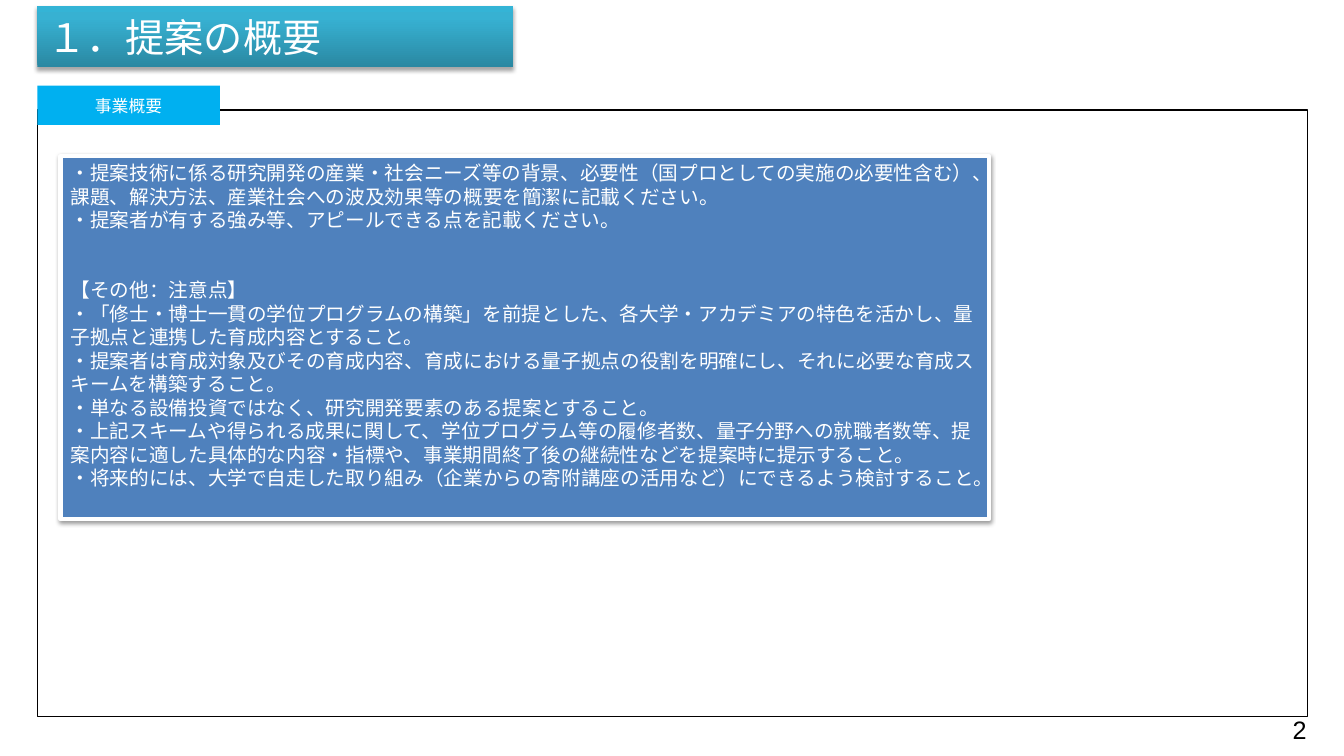
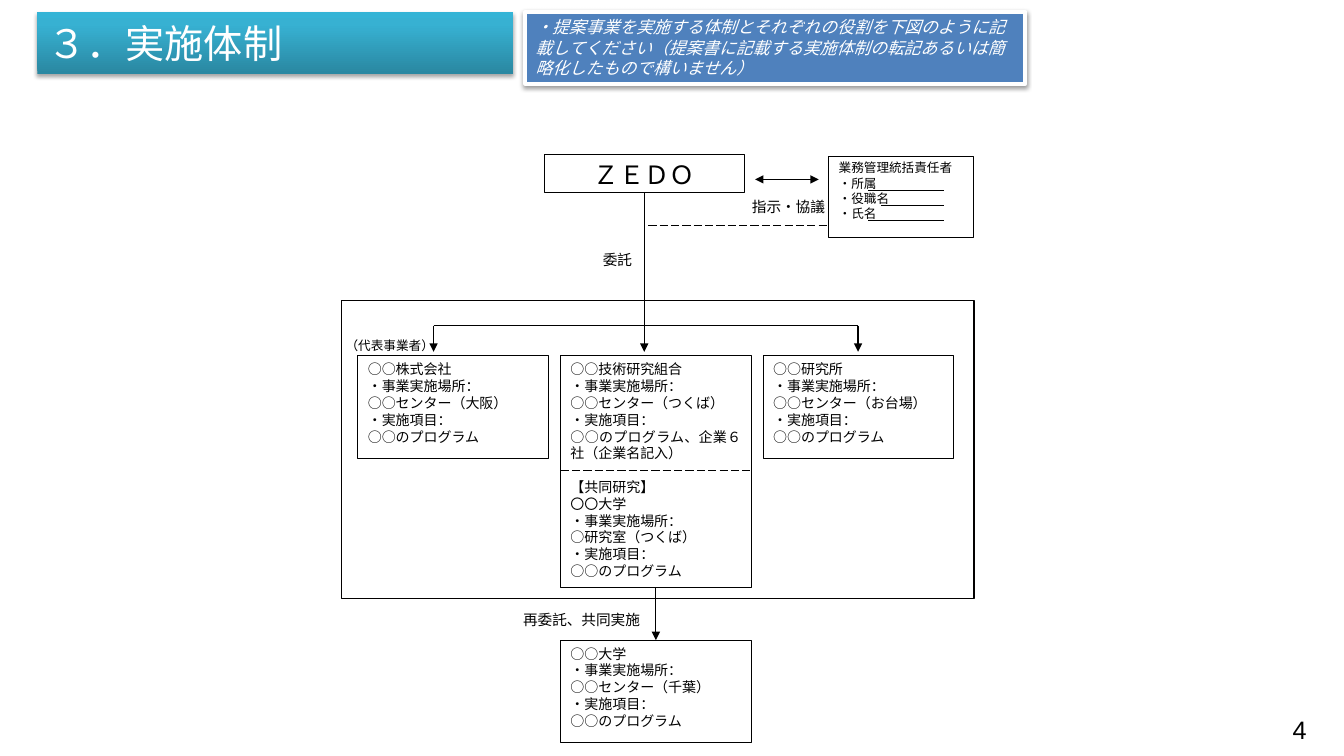
from copy import deepcopy
from dataclasses import dataclass
from typing import Optional

from lxml.etree import SubElement
from pptx import Presentation
from pptx.dml.color import RGBColor
from pptx.enum.dml import MSO_LINE
from pptx.enum.shapes import MSO_CONNECTOR, MSO_SHAPE
from pptx.enum.text import MSO_ANCHOR, MSO_AUTO_SIZE, PP_ALIGN
from pptx.oxml.ns import qn
from pptx.util import Inches, Pt

FONT = "Arial"
WHITE = RGBColor(0xFF, 0xFF, 0xFF)
BLACK = RGBColor(0x00, 0x00, 0x00)
FRAME_BLACK = RGBColor(0x02, 0x00, 0x00)
CALLOUT_BLUE = RGBColor(0x4F, 0x81, 0xBD)
TAG_BLUE = RGBColor(0x00, 0xB0, 0xF0)
TITLE_STOPS = (
    (0.0, RGBColor(0x2A, 0x88, 0xA2)),
    (0.8, RGBColor(0x37, 0xB1, 0xD2)),
    (1.0, RGBColor(0x34, 0xB4, 0xD6)),
)

LEFT_MARGIN = 0.37
PARTY_LEFT, PARTY_STEP, PARTY_TOP = 3.55, 2.01, 3.53
PARTY_WIDTH, PARTY_HEIGHT = 1.89, 1.02


@dataclass(frozen=True)
class Area:
    """A rectangle in inches."""
    left: float
    top: float
    width: float
    height: float

    def lengths(self):
        return (Inches(self.left), Inches(self.top),
                Inches(self.width), Inches(self.height))


@dataclass(frozen=True)
class TextStyle:
    size: float
    color: RGBColor = BLACK
    alignment: PP_ALIGN = PP_ALIGN.LEFT
    anchor: MSO_ANCHOR = MSO_ANCHOR.TOP
    italic: bool = False


@dataclass(frozen=True)
class Label:
    text: str
    area: Area
    size: float = 10.5


@dataclass(frozen=True)
class Party:
    """A participant box: its column, top, height and lines."""
    column: int
    top: float
    height: float
    lines: list[str]


@dataclass(frozen=True)
class Line:
    start: tuple[float, float]
    end: tuple[float, float]
    head: bool = False
    tail: bool = False
    dashed: bool = False


TITLE_STYLE = TextStyle(28, WHITE, anchor=MSO_ANCHOR.MIDDLE)
PARTY_STYLE = TextStyle(10, alignment=PP_ALIGN.JUSTIFY)


def write_text(shape, lines: list[str], style: TextStyle,
               gaps: Optional[dict[int, float]] = None) -> None:
    """Fill a shape with paragraphs; gaps maps a line index to points above it."""
    frame = shape.text_frame
    frame.text = "\n".join(lines)
    frame.word_wrap = True
    frame.auto_size = MSO_AUTO_SIZE.NONE
    frame.vertical_anchor = style.anchor
    for index, paragraph in enumerate(frame.paragraphs):
        paragraph.alignment = style.alignment
        paragraph.space_before = Pt((gaps or {}).get(index, 0))
        font = paragraph.font
        font.name = FONT
        font.size = Pt(style.size)
        font.italic = style.italic
        font.color.rgb = style.color


def move(shape, area: Area) -> None:
    shape.left, shape.top, shape.width, shape.height = area.lengths()


def add_soft_shadow(shape, opacity: int, distance: float) -> None:
    shape.shadow.inherit = False
    effects = shape.element.spPr.find(qn("a:effectLst"))
    shadow = SubElement(effects, qn("a:outerShdw"), blurRad=str(Pt(3.1)),
                        dist=str(Pt(distance)), dir="5400000", rotWithShape="0")
    color = SubElement(shadow, qn("a:srgbClr"), val=str(BLACK))
    SubElement(color, qn("a:alpha"), val=str(opacity * 1000))


def set_title(slide, text: str, top: float) -> None:
    title = slide.shapes.title
    move(title, Area(LEFT_MARGIN, top, 4.72, 0.61))
    title.fill.gradient()
    title.fill.gradient_angle = 90
    stop_list = title.element.spPr.find(".//" + qn("a:gsLst"))
    stop_list.append(deepcopy(stop_list[0]))
    for stop, (position, color) in zip(title.fill.gradient_stops, TITLE_STOPS):
        stop.position = position
        stop.color.rgb = color
    add_soft_shadow(title, 35, 1.8)
    write_text(title, [text], TITLE_STYLE)


def set_callout(slide, area: Area, lines: list[str], style: TextStyle,
                gaps: Optional[dict[int, float]] = None) -> None:
    """Turn the body placeholder into the blue instruction box."""
    body = slide.placeholders[1]
    move(body, area)
    body.fill.solid()
    body.fill.fore_color.rgb = CALLOUT_BLUE
    body.line.color.rgb = WHITE
    body.line.width = Pt(3)
    add_soft_shadow(body, 38, 1.6)
    body.text_frame.text = "\n".join(lines)
    write_text(body, lines, style, gaps)
    for paragraph in body.text_frame.paragraphs:
        properties = paragraph.font._element.getparent()
        properties.set("marL", "0")
        properties.set("indent", "0")
        no_bullet = SubElement(properties, qn("a:buNone"))
        properties.find(qn("a:defRPr")).addprevious(no_bullet)


def add_text(slide, area: Area, text: str, style: TextStyle):
    box = slide.shapes.add_textbox(*area.lengths())
    write_text(box, [text], style)
    return box


def add_page_number(slide, number: int) -> None:
    box = add_text(slide, Area(12.38, 7.11, 0.58, 0.25), str(number),
                   TextStyle(18, BLACK, PP_ALIGN.RIGHT, MSO_ANCHOR.MIDDLE))
    frame = box.text_frame
    frame.margin_left = frame.margin_right = 0
    frame.margin_top = frame.margin_bottom = 0


def add_box(slide, area: Area, fill: Optional[RGBColor] = None,
            line: Optional[RGBColor] = BLACK, line_width: float = 0.75):
    box = slide.shapes.add_shape(MSO_SHAPE.RECTANGLE, *area.lengths())
    box.shadow.inherit = False
    if fill is None:
        box.fill.background()
    else:
        box.fill.solid()
        box.fill.fore_color.rgb = fill
    if line is None:
        box.line.fill.background()
    else:
        box.line.color.rgb = line
        box.line.width = Pt(line_width)
    return box


def add_line(slide, line: Line):
    connector = slide.shapes.add_connector(
        MSO_CONNECTOR.STRAIGHT, *(Inches(value) for value in line.start + line.end))
    connector.line.color.rgb = BLACK
    connector.line.width = Pt(0.75)
    if line.dashed:
        connector.line.dash_style = MSO_LINE.LONG_DASH
    properties = connector.element.spPr
    outline = properties.find(qn("a:ln"))
    for tag, wanted in (("a:headEnd", line.head), ("a:tailEnd", line.tail)):
        if wanted:
            SubElement(outline, qn(tag), type="triangle")
    SubElement(properties, qn("a:effectLst"))
    return connector


def party_lines(name: str, place: str, task: str = "○○のプログラム") -> list[str]:
    return [name, "・事業実施場所：", place, "・実施項目：", task]


def add_party(slide, party: Party):
    area = Area(PARTY_LEFT + party.column * PARTY_STEP, party.top,
                PARTY_WIDTH, party.height)
    box = add_box(slide, area, WHITE)
    write_text(box, party.lines, PARTY_STYLE,
               {party.lines.index(line): 12 for line in party.lines
                if line == "【共同研究】"})
    return box


def build_overview(slide) -> None:
    set_title(slide, "１．提案の概要", 0.06)
    set_callout(slide, Area(0.6, 1.55, 9.21, 3.6), [
        "・提案技術に係る研究開発の産業・社会ニーズ等の背景、必要性（国プロとしての実施の必要性含む）、課題、解決方法、産業社会への波及効果等の概要を簡潔に記載ください。",
        "・提案者が有する強み等、アピールできる点を記載ください。",
        "【その他：注意点】",
        "・「修士・博士一貫の学位プログラムの構築」を前提とした、各大学・アカデミアの特色を活かし、量子拠点と連携した育成内容とすること。",
        "・提案者は育成対象及びその育成内容、育成における量子拠点の役割を明確にし、それに必要な育成スキームを構築すること。",
        "・単なる設備投資ではなく、研究開発要素のある提案とすること。",
        "・上記スキームや得られる成果に関して、学位プログラム等の履修者数、量子分野への就職者数等、提案内容に適した具体的な内容・指標や、事業期間終了後の継続性などを提案時に提示すること。",
        "・将来的には、大学で自走した取り組み（企業からの寄附講座の活用など）にできるよう検討すること。",
    ], TextStyle(14, WHITE), {2: 33})
    add_page_number(slide, 2)
    add_box(slide, Area(LEFT_MARGIN, 1.09, 12.6, 6.02), line=FRAME_BLACK, line_width=1)
    tag = add_box(slide, Area(LEFT_MARGIN, 0.85, 1.81, 0.39), TAG_BLUE, line=None)
    write_text(tag, ["事業概要"],
               TextStyle(12, WHITE, PP_ALIGN.CENTER, MSO_ANCHOR.MIDDLE))


def build_organization(slide) -> None:
    set_title(slide, "３．実施体制", 0.12)
    set_callout(slide, Area(5.21, 0.12, 4.96, 0.71), [
        "・提案事業を実施する体制とそれぞれの役割を下図のように記載してください（提案書に記載する実施体制の転記あるいは簡略化したもので構いません）",
    ], TextStyle(12, WHITE, italic=True))
    add_page_number(slide, 4)

    agency = add_box(slide, Area(5.4, 1.53, 1.98, 0.38), WHITE)
    write_text(agency, ["ＺＥＤＯ"], TextStyle(18, alignment=PP_ALIGN.CENTER))
    manager = add_box(slide, Area(8.22, 1.55, 1.44, 0.81), WHITE)
    write_text(manager, ["業務管理統括責任者", "・所属", "・役職名", "・氏名"],
               TextStyle(9, alignment=PP_ALIGN.JUSTIFY))
    manager.text_frame.margin_top = manager.text_frame.margin_bottom = Inches(0.04)

    parties = [
        Party(0, PARTY_TOP, PARTY_HEIGHT,
              party_lines("○○株式会社", "○○センター（大阪）")),
        Party(2, PARTY_TOP, PARTY_HEIGHT,
              party_lines("○○研究所", "○○センター（お台場）")),
        Party(1, PARTY_TOP, 2.3,
              party_lines("○○技術研究組合", "○○センター（つくば）",
                          "○○のプログラム、企業６社（企業名記入）")
              + ["【共同研究】"] + party_lines("〇〇大学", "○研究室（つくば）")),
        Party(1, 6.35, PARTY_HEIGHT,
              party_lines("○○大学", "○○センター（千葉）")),
    ]
    *_, association, subcontractor = [add_party(slide, party) for party in parties]

    lines = [
        Line((7.49, 1.78), (8.12, 1.78), head=True, tail=True),
        Line((6.43, 2.24), (8.22, 2.24), dashed=True),
        Line((4.3, 3.23), (8.51, 3.23)),
        Line((4.3, 3.23), (4.3, 3.49), tail=True),
        Line((8.51, 3.23), (8.51, 3.49), tail=True),
        Line((5.56, 4.67), (7.45, 4.67), dashed=True),
    ]
    blank_starts = (8.61, 8.74, 8.61)
    lines += [Line((left, 1.89 + row * 0.15), (9.36, 1.89 + row * 0.15))
              for row, left in enumerate(blank_starts)]
    for line in lines:
        add_line(slide, line)

    commission = add_line(slide, Line((6.39, 1.91), (6.39, 3.49), tail=True))
    commission.begin_connect(agency, 2)
    subcontract = add_line(slide, Line((6.5, 5.83), (6.5, 6.35), tail=True))
    subcontract.begin_connect(association, 2)
    subcontract.end_connect(subcontractor, 0)

    for label in (
        Label("指示・協議", Area(7.36, 1.91, 1.02, 0.33)),
        Label("（代表事業者）", Area(3.33, 3.3, 1.17, 0.29), 9),
        Label("委託", Area(5.88, 2.44, 0.55, 0.33)),
        Label("再委託、共同実施", Area(5.09, 6.01, 1.4, 0.28)),
    ):
        add_text(slide, label.area, label.text,
                 TextStyle(label.size, alignment=PP_ALIGN.JUSTIFY))
    add_box(slide, Area(3.39, 2.98, 6.27, 2.96), line=FRAME_BLACK, line_width=1)


def main() -> None:
    presentation = Presentation()
    presentation.slide_width = Inches(13.33)
    presentation.slide_height = Inches(7.5)
    title_and_content = presentation.slide_layouts[1]
    for build in (build_overview, build_organization):
        build(presentation.slides.add_slide(title_and_content))
    presentation.save("out.pptx")


if __name__ == "__main__":
    main()
